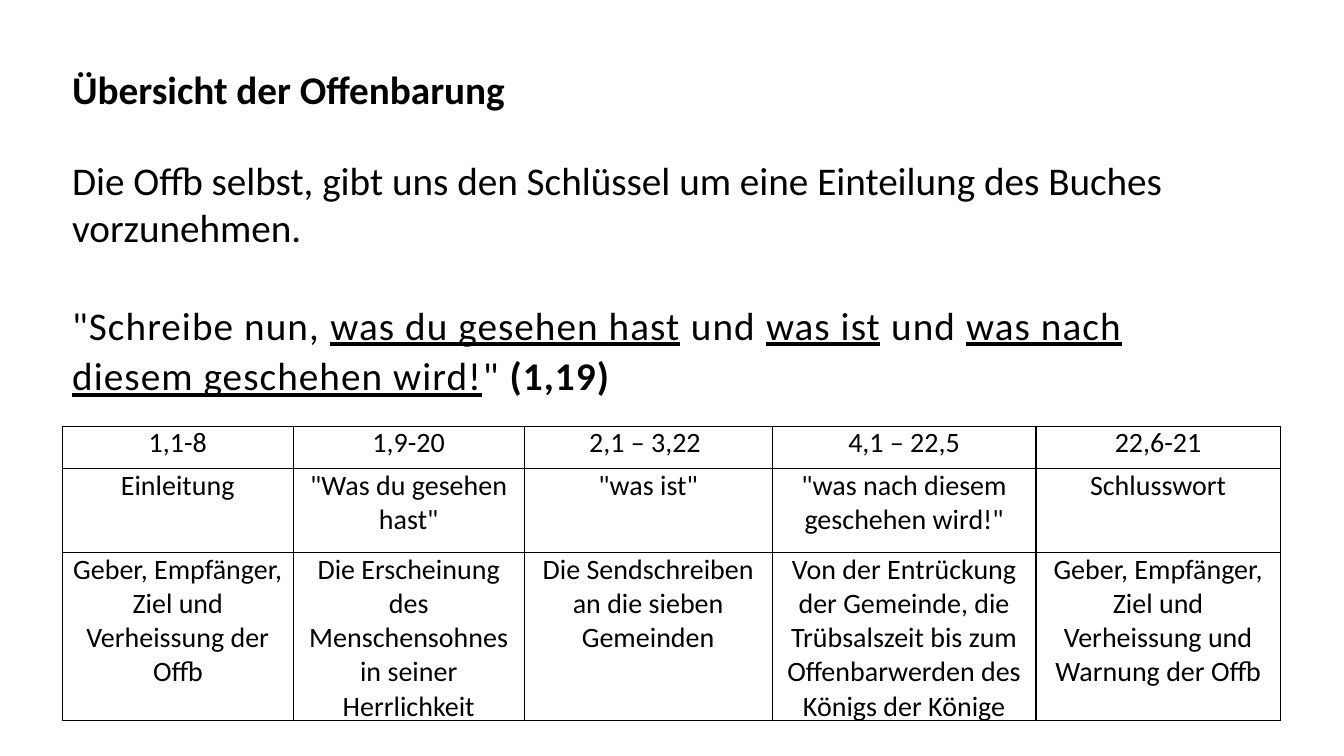
from dataclasses import dataclass

from lxml import etree
from pptx import Presentation
from pptx.dml.color import RGBColor
from pptx.enum.text import MSO_AUTO_SIZE, PP_ALIGN
from pptx.oxml.ns import qn
from pptx.util import Cm, Pt

CENTER = PP_ALIGN.CENTER
GROW = MSO_AUTO_SIZE.SHAPE_TO_FIT_TEXT


@dataclass(frozen=True)
class Theme:
    font: str = "Calibri"
    ink: str = "000000"
    body_size: int = 28
    table_size: int = 20
    border_width: int = 1


theme = Theme()


def add_span(paragraph, text, size, bold=False, underline=False):
    span = paragraph.add_run()
    span.text = text
    span.font.name = theme.font
    span.font.size = Pt(size)
    span.font.color.rgb = RGBColor.from_string(theme.ink)
    span.font.bold = bold
    span.font.underline = underline
    return span


def add_text_box(page, left, top, width, height):
    box = page.shapes.add_textbox(Cm(left), Cm(top), Cm(width), Cm(height))
    box.text_frame.word_wrap = True
    box.text_frame.auto_size = GROW
    return box.text_frame


deck = Presentation()
deck.slide_width = Cm(33.87)
deck.slide_height = Cm(19.05)
page = deck.slides.add_slide(deck.slide_layouts[6])

title = add_text_box(page, 1.57, 1.52, 12.95, 1.45)
add_span(title.paragraphs[0], "Übersicht der Offenbarung", theme.body_size, bold=True)

body = add_text_box(page, 1.57, 3.81, 29.72, 6.35)
add_span(
    body.paragraphs[0],
    "Die Offb selbst, gibt uns den Schlüssel um eine Einteilung des Buches vorzunehmen.",
    theme.body_size,
)

quote = body.add_paragraph()
quote.space_before = Pt(34)
quote.space_after = Pt(2)
quote.line_spacing = 1.07
quote_spans = [
    ("\"Schreibe nun, ", False, False),
    ("was du gesehen hast", False, True),
    (" und ", False, False),
    ("was ist", False, True),
    (" und ", False, False),
    ("was nach diesem geschehen wird!", False, True),
    ("\" ", False, False),
    ("(1,19)", True, False),
]
for text, bold, underline in quote_spans:
    span = add_span(quote, text, theme.body_size, bold, underline)
    span.font._element.set("spc", "80")

column_widths = [5.82, 5.82, 6.25, 6.65, 6.15]
row_heights = [1.07, 2.11, 4.24]
sections = [
    ("1,1-8", "Einleitung", "Geber, Empfänger, Ziel und Verheissung der Offb"),
    (
        "1,9-20",
        "\"Was du gesehen hast\"",
        "Die Erscheinung des Menschensohnes in seiner Herrlichkeit",
    ),
    ("2,1 – 3,22 ", "\"was ist\"", "Die Sendschreiben an die sieben Gemeinden"),
    (
        "4,1 – 22,5",
        "\"was nach diesem geschehen wird!\"",
        "Von der Entrückung der Gemeinde, die Trübsalszeit bis zum "
        "Offenbarwerden des Königs der Könige",
    ),
    ("22,6-21", "Schlusswort", "Geber, Empfänger, Ziel und Verheissung und Warnung der Offb"),
]

table = page.shapes.add_table(
    len(row_heights), len(sections),
    Cm(1.57), Cm(10.74), Cm(sum(column_widths)), Cm(sum(row_heights)),
).table
table.first_row = False
table.horz_banding = False
for row, height in zip(table.rows, row_heights):
    row.height = Cm(height)

for column_index, (width, section) in enumerate(zip(column_widths, sections)):
    table.columns[column_index].width = Cm(width)
    for row_index, text in enumerate(section):
        cell = table.cell(row_index, column_index)
        cell.margin_left = cell.margin_right = Cm(0.18)
        cell.margin_top = cell.margin_bottom = 0
        paragraph = cell.text_frame.paragraphs[0]
        paragraph.alignment = CENTER
        add_span(paragraph, text, theme.table_size)
        properties = cell._tc.get_or_add_tcPr()
        for side in ("a:lnL", "a:lnR", "a:lnT", "a:lnB"):
            border = etree.SubElement(properties, qn(side), w=str(Pt(theme.border_width)))
            fill = etree.SubElement(border, qn("a:solidFill"))
            etree.SubElement(fill, qn("a:srgbClr"), val=theme.ink)
        cell.fill.background()

deck.save("out.pptx")
